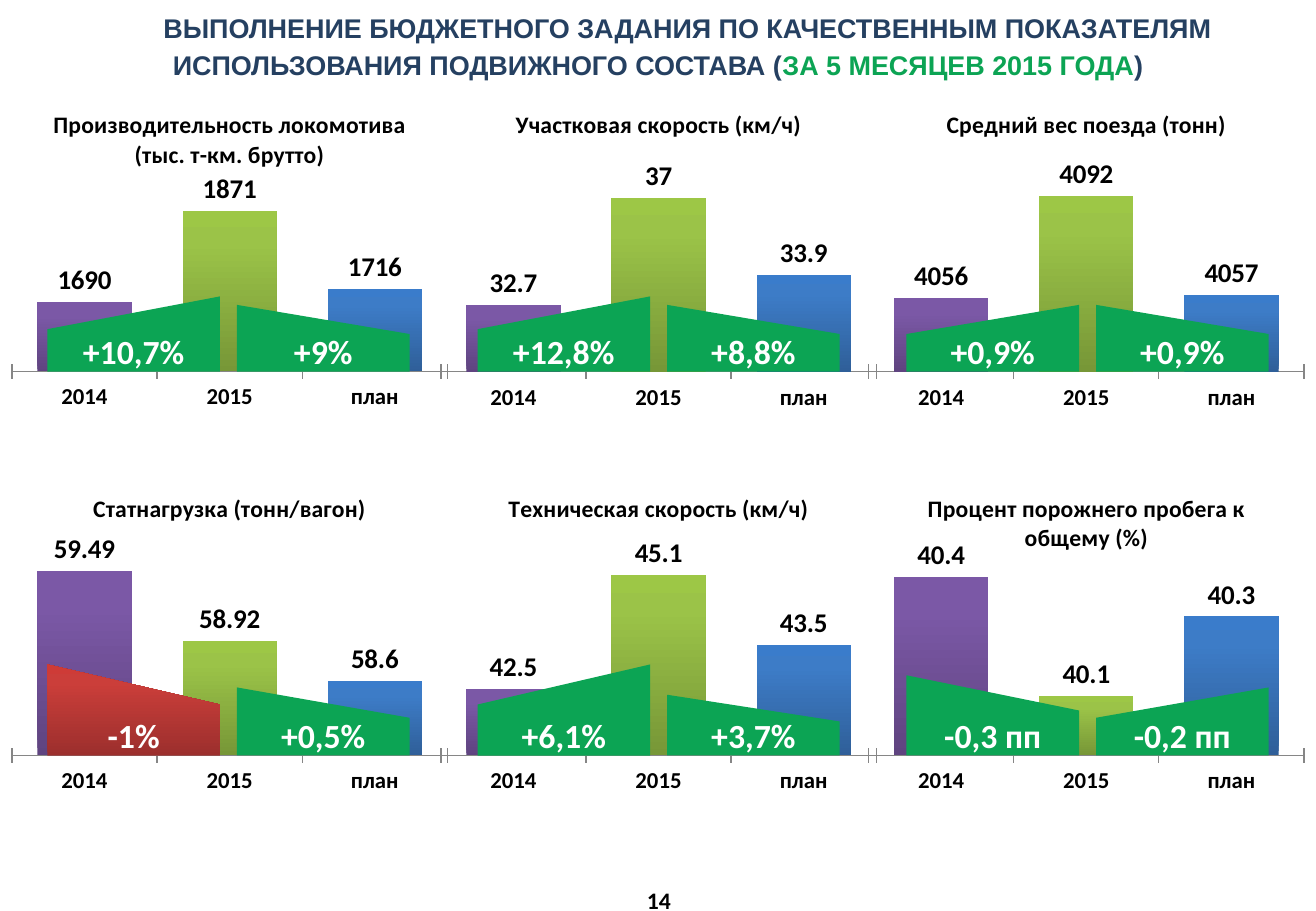
from copy import deepcopy
from dataclasses import dataclass

from lxml.etree import SubElement
from pptx import Presentation
from pptx.chart.chart import Chart
from pptx.chart.data import CategoryChartData
from pptx.dml.color import RGBColor
from pptx.dml.fill import FillFormat
from pptx.enum.chart import XL_CHART_TYPE, XL_LABEL_POSITION, XL_TICK_MARK
from pptx.enum.text import MSO_ANCHOR, MSO_AUTO_SIZE, PP_ALIGN
from pptx.oxml import parse_xml
from pptx.oxml.ns import nsdecls, qn
from pptx.oxml.xmlchemy import BaseOxmlElement
from pptx.slide import Slide
from pptx.text.text import Font, TextFrame, _Paragraph
from pptx.util import Emu, Pt

EMU_PER_PX = 9144
CATEGORIES = ("2014", "2015", "план")
GREEN = "0CA454"
NAVY = "254061"
PURPLE_STOPS = ("5F4480", "7B58A6", "7C57A8")
LIME_STOPS = ("779737", "9BC348", "9DC746")
BLUE_STOPS = ("2F5F99", "3D7CC7", "3A7CCB")
RED_STOPS = ("9C2F2D", "CB3E3A", "CE3B37")
STOP_POSITIONS = (0, 0.8, 1)
COLUMNS = ((0, 39), (353, 393), (705, 746))
ROW_TOPS = (75, 391)
CHART_WIDTH, CHART_HEIGHT = 378, 268
RAMP_WIDTH, RAMP_STEP, RAMP_BASE = 142, 156, 231
PLOT_BOTTOM = 0.862


@dataclass(frozen=True)
class Ramp:
    text: str
    left_height: int
    right_height: int
    falling: bool = False


@dataclass(frozen=True)
class Indicator:
    title: str
    values: tuple[float, float, float]
    minimum: float
    maximum: float
    ramps: tuple[Ramp, Ramp]
    plot_top: float = 0.252


INDICATORS = (
    Indicator("Производительность локомотива (тыс. т-км. брутто)", (1690, 1871, 1716), 1550, 1900,
              (Ramp("+10,7%", 35, 62), Ramp("+9%", 55, 31)), 0.325),
    Indicator("Участковая скорость (км/ч)", (32.7, 37, 33.9), 30, 38,
              (Ramp("+12,8%", 35, 62), Ramp("+8,8%", 55, 31))),
    Indicator("Средний вес поезда (тонн)", (4056, 4092, 4057), 4030, 4100,
              (Ramp("+0,9%", 31, 55), Ramp("+0,9%", 55, 31))),
    Indicator("Статнагрузка (тонн/вагон)", (59.49, 58.92, 58.6), 58, 59.6,
              (Ramp("-1%", 75, 42, falling=True), Ramp("+0,5%", 56, 31))),
    Indicator("Техническая скорость (км/ч)", (42.5, 45.1, 43.5), 41, 45.5,
              (Ramp("+6,1%", 42, 75), Ramp("+3,7%", 50, 28))),
    Indicator("Процент порожнего пробега к общему (%)", (40.4, 40.1, 40.3), 39.95, 40.45,
              (Ramp("-0,3 пп", 66, 37), Ramp("-0,2 пп", 31, 56))),
)


def px(length: int) -> Emu:
    return Emu(length * EMU_PER_PX)


def color(value: str) -> RGBColor:
    return RGBColor.from_string(value)


def style_font(font: Font, size: float, fill: str = "000000", name: str = "Calibri") -> None:
    font.name, font.size, font.bold = name, Pt(size), True
    font.color.rgb = color(fill)


def add_span(para: _Paragraph, text: str, size: float, fill: str = "000000",
             name: str = "Calibri") -> None:
    span = para.add_run()
    span.text = text
    style_font(span.font, size, fill, name)


def paint_solid(fill: FillFormat, value: str) -> None:
    fill.solid()
    fill.fore_color.rgb = color(value)


def paint_gradient(fill: FillFormat, owner: BaseOxmlElement, colors: tuple[str, ...]) -> None:
    fill.gradient()
    fill.gradient_angle = 90
    stop_list = owner.xpath(".//a:gsLst")[-1]
    stop_list.append(deepcopy(stop_list[-1]))
    for stop, position, value in zip(fill.gradient_stops, STOP_POSITIONS, colors):
        stop.position = position
        stop.color.rgb = color(value)


def add_box(page: Slide, left: int, top: int, width: int, height: int) -> TextFrame:
    frame = page.shapes.add_textbox(px(left), px(top), px(width), px(height)).text_frame
    frame.word_wrap = True
    frame.vertical_anchor = MSO_ANCHOR.MIDDLE
    return frame


def add_heading(page: Slide) -> None:
    frame = add_box(page, 0, 0, 1083, 72)
    frame.auto_size = MSO_AUTO_SIZE.SHAPE_TO_FIT_TEXT
    para = frame.paragraphs[0]
    para.alignment = PP_ALIGN.CENTER
    para.line_spacing = Pt(22)
    para._p.get_or_add_pPr().set("indent", str(px(49)))
    for text, fill in (
        ("ВЫПОЛНЕНИЕ БЮДЖЕТНОГО ЗАДАНИЯ ПО КАЧЕСТВЕННЫМ ПОКАЗАТЕЛЯМ "
         "ИСПОЛЬЗОВАНИЯ ПОДВИЖНОГО СОСТАВА (", NAVY),
        ("ЗА 5 МЕСЯЦЕВ 2015 ГОДА", GREEN),
        (")", NAVY),
    ):
        add_span(para, text, 16, fill, "Arial")


def add_page_number(page: Slide) -> None:
    para = add_box(page, 507, 721, 55, 40).paragraphs[0]
    para.alignment = PP_ALIGN.RIGHT
    add_span(para, "14", 14)


def place_plot(chart: Chart, top: float) -> None:
    space = chart._chartSpace
    plot_area = space.xpath("c:chart/c:plotArea")[0]
    for layout in plot_area.findall(qn("c:layout")):
        plot_area.remove(layout)
    layout = parse_xml(f"<c:layout {nsdecls('c')}/>")
    manual = SubElement(layout, qn("c:manualLayout"))
    for tag, value in (("layoutTarget", "inner"), ("xMode", "edge"), ("yMode", "edge"),
                       ("x", 0.026), ("y", top), ("w", 0.948), ("h", round(PLOT_BOTTOM - top, 3))):
        SubElement(manual, qn(f"c:{tag}")).set("val", str(value))
    plot_area.insert(0, layout)
    space.xpath("c:chart")[0].addnext(parse_xml(
        f"<c:spPr {nsdecls('c', 'a')}><a:noFill/><a:ln><a:noFill/></a:ln></c:spPr>"))


def add_indicator_chart(page: Slide, indicator: Indicator, left: int, top: int) -> None:
    data = CategoryChartData()
    data.categories = CATEGORIES
    data.add_series(indicator.title, indicator.values)
    chart = page.shapes.add_chart(XL_CHART_TYPE.COLUMN_CLUSTERED, px(left), px(top),
                                  px(CHART_WIDTH), px(CHART_HEIGHT), data).chart
    chart.font.name, chart.font.size = "Calibri", Pt(17.3)
    chart.font.color.rgb = color("000000")
    chart.has_legend = False
    add_span(chart.chart_title.text_frame.paragraphs[0], indicator.title, 14)
    place_plot(chart, indicator.plot_top)

    category_axis, value_axis = chart.category_axis, chart.value_axis
    category_axis.major_tick_mark = XL_TICK_MARK.CROSS
    category_axis.format.line.color.rgb = color("868686")
    style_font(category_axis.tick_labels.font, 13.5)
    value_axis.minimum_scale, value_axis.maximum_scale = indicator.minimum, indicator.maximum
    gridline = value_axis.major_gridlines.format.line
    gridline.color.rgb, gridline.width = color("FFFFFF"), Pt(0.75)
    value_axis.visible = False

    plot = chart.plots[0]
    plot.gap_width, plot.vary_by_categories = 54, False
    plot.has_data_labels = True
    plot.data_labels.show_value = True
    plot.data_labels.position = XL_LABEL_POSITION.OUTSIDE_END
    style_font(plot.data_labels.font, 16)
    series = plot.series[0]
    paint_solid(series.format.fill, "4F81BD")
    for index, stops in enumerate((PURPLE_STOPS, LIME_STOPS, BLUE_STOPS)):
        paint_gradient(series.points[index].format.fill, series._element, stops)


def add_ramp(page: Slide, ramp: Ramp, left: int, base: int) -> None:
    right = left + RAMP_WIDTH
    builder = page.shapes.build_freeform(left, base - ramp.left_height, EMU_PER_PX)
    builder.add_line_segments(((right, base - ramp.right_height), (right, base), (left, base)))
    shape = builder.convert_to_shape()
    shape.shadow.inherit = False
    shape.line.fill.background()
    if ramp.falling:
        paint_gradient(shape.fill, shape._element, RED_STOPS)
    else:
        paint_solid(shape.fill, GREEN)
    frame = shape.text_frame
    frame.word_wrap = True
    frame.vertical_anchor = MSO_ANCHOR.BOTTOM
    frame.margin_bottom = 0
    para = frame.paragraphs[0]
    para.alignment = PP_ALIGN.CENTER
    add_span(para, ramp.text, 20, "FFFFFF")


def main() -> None:
    deck = Presentation()
    deck.slide_width, deck.slide_height = px(1083), px(750)
    page = deck.slides.add_slide(deck.slide_layouts[6])
    add_heading(page)
    add_page_number(page)
    for index, indicator in enumerate(INDICATORS):
        row, column = divmod(index, len(COLUMNS))
        chart_left, ramp_left = COLUMNS[column]
        top = ROW_TOPS[row]
        add_indicator_chart(page, indicator, chart_left, top)
        for position, ramp in enumerate(indicator.ramps):
            add_ramp(page, ramp, ramp_left + position * RAMP_STEP, top + RAMP_BASE)
    deck.save("out.pptx")


if __name__ == "__main__":
    main()
